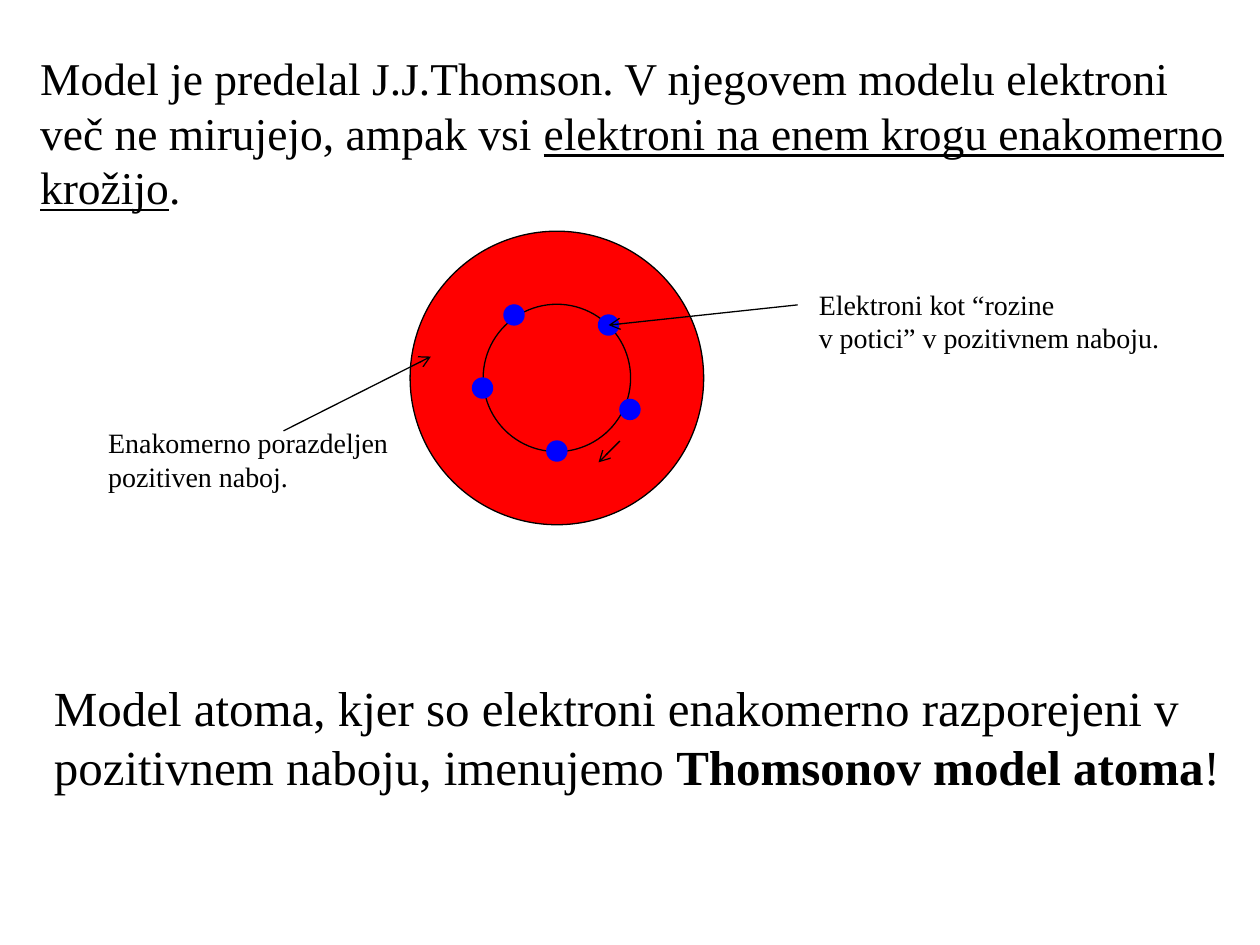
from lxml.etree import SubElement
from pptx import Presentation
from pptx.dml.color import RGBColor
from pptx.enum.shapes import MSO_CONNECTOR, MSO_SHAPE
from pptx.oxml.ns import qn
from pptx.util import Inches, Pt

COLORS = {"ink": "000000", "positive": "FF0000", "electron": "0000FF"}
FONT = "Times New Roman"
CENTER_X, CENTER_Y = 4.42, 3.0

prs = Presentation()
prs.slide_width, prs.slide_height = Inches(10), Inches(7.5)
slide = prs.slides.add_slide(prs.slide_layouts[6])


def add_circle(x, y, diameter, fill=None, outlined=True):
    """Draw a circle centred on x, y."""
    circle = slide.shapes.add_shape(
        MSO_SHAPE.OVAL, Inches(x - diameter / 2), Inches(y - diameter / 2),
        Inches(diameter), Inches(diameter))
    circle.shadow.inherit = False
    if fill:
        circle.fill.solid()
        circle.fill.fore_color.rgb = RGBColor.from_string(COLORS[fill])
    else:
        circle.fill.background()
    if outlined:
        circle.line.color.rgb = RGBColor.from_string(COLORS["ink"])
        circle.line.width = Pt(0.75)
    else:
        circle.line.fill.background()


# Atom: positive charge, orbit and electrons
add_circle(CENTER_X, CENTER_Y, 2.33, "positive")
add_circle(CENTER_X, CENTER_Y, 1.17)
for x, y in [(4.42, 3.58), (3.83, 3.08), (5, 3.25), (4.08, 2.5), (4.83, 2.58)]:
    add_circle(x, y, 0.17, "electron", outlined=False)

# Pointers to the charge and an electron, and the direction of rotation
for start_x, start_y, end_x, end_y in [
    (2.25, 3.42, 3.42, 2.83),
    (6.33, 2.42, 4.83, 2.58),
    (4.92, 3.5, 4.75, 3.67),
]:
    arrow = slide.shapes.add_connector(
        MSO_CONNECTOR.STRAIGHT, Inches(start_x), Inches(start_y),
        Inches(end_x), Inches(end_y))
    arrow.line.color.rgb = RGBColor.from_string(COLORS["ink"])
    arrow.line.width = Pt(0.75)
    SubElement(arrow.line._get_or_add_ln(), qn("a:tailEnd"), type="arrow")
    SubElement(arrow._element.spPr, qn("a:effectLst"))

# Each text: left, top, width, height, size, lines of (wording, emphasis)
texts = [
    (0.22, 0.35, 9.6, 1.4, 26, [
        [("Model je predelal J.J.Thomson. V njegovem modelu elektroni", None)],
        [("več ne mirujejo, ampak vsi ", None),
         ("elektroni na enem krogu enakomerno", "underline")],
        [("krožijo", "underline"), (".", None)],
    ]),
    (0.76, 3.33, 2.48, 0.64, 16, [
        [("Enakomerno porazdeljen", None)],
        [("pozitiven naboj.", None)],
    ]),
    (6.4, 2.23, 2.91, 0.64, 16, [
        [("Elektroni kot “rozine", None)],
        [("v potici” v pozitivnem naboju.", None)],
    ]),
    (0.33, 5.33, 9.47, 1.04, 28, [
        [("Model atoma, kjer so elektroni enakomerno razporejeni v", None)],
        [("pozitivnem naboju, imenujemo ", None),
         ("Thomsonov model atoma", "bold"), ("!", None)],
    ]),
]
for left, top, width, height, size, lines in texts:
    frame = slide.shapes.add_textbox(
        Inches(left), Inches(top), Inches(width), Inches(height)).text_frame
    frame.word_wrap = True
    frame.margin_right = 0
    for index, line in enumerate(lines):
        paragraph = frame.add_paragraph() if index else frame.paragraphs[0]
        for wording, emphasis in line:
            run = paragraph.add_run()
            run.text = wording
            run.font.name = FONT
            run.font.size = Pt(size)
            run.font.color.rgb = RGBColor.from_string(COLORS["ink"])
            run.font.underline = emphasis == "underline"
            run.font.bold = emphasis == "bold"

prs.save("out.pptx")
